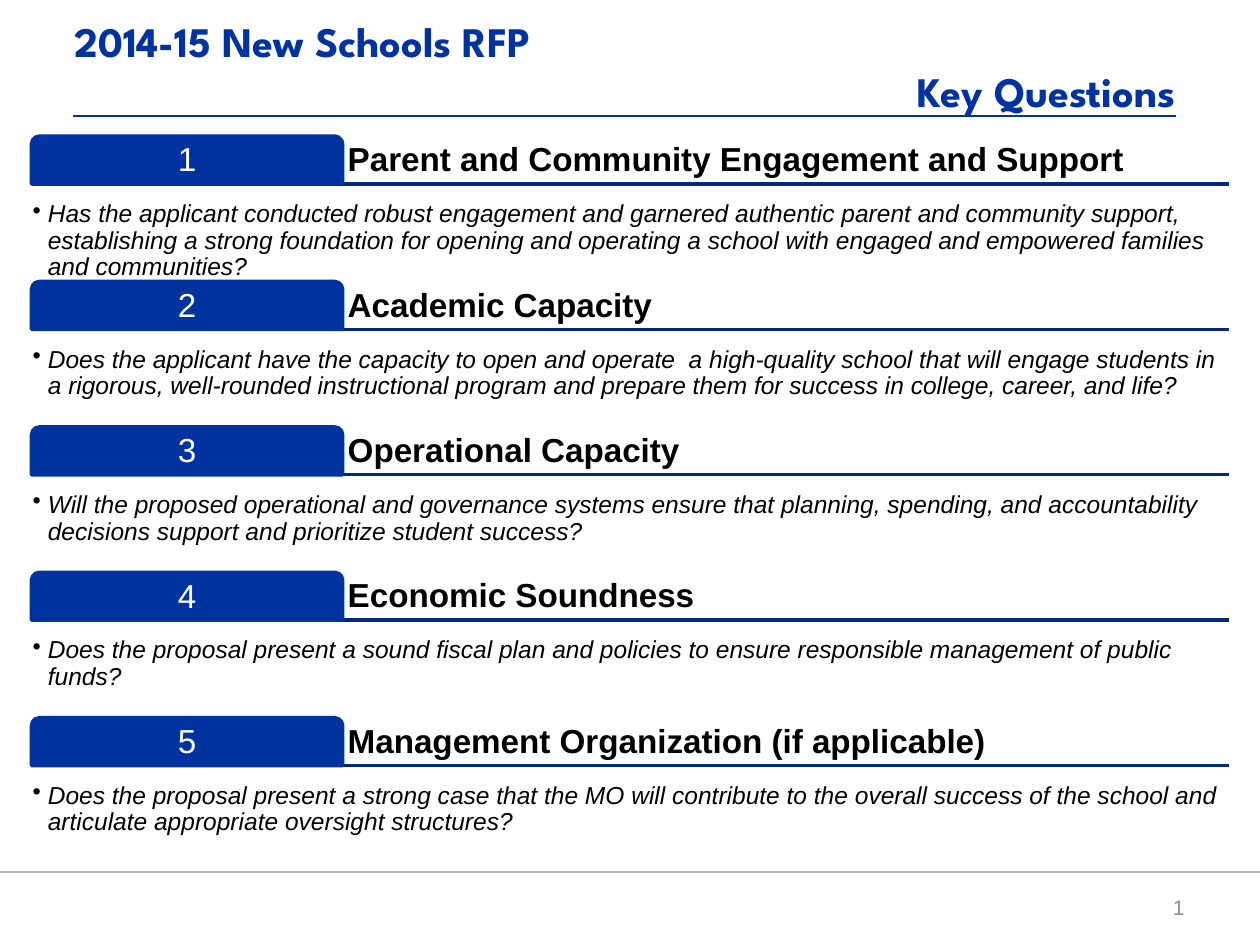
from dataclasses import dataclass

from lxml import etree
from pptx import Presentation
from pptx.dml.color import RGBColor
from pptx.enum.shapes import MSO_CONNECTOR, MSO_SHAPE
from pptx.enum.text import MSO_ANCHOR, PP_ALIGN
from pptx.oxml.ns import qn
from pptx.util import Inches, Pt

LEFT, CENTER, RIGHT = PP_ALIGN.LEFT, PP_ALIGN.CENTER, PP_ALIGN.RIGHT
TOP, MIDDLE, BOTTOM = MSO_ANCHOR.TOP, MSO_ANCHOR.MIDDLE, MSO_ANCHOR.BOTTOM
TAB_SHAPE = MSO_SHAPE.ROUND_2_SAME_RECTANGLE
STRAIGHT = MSO_CONNECTOR.STRAIGHT

COLORS = {
    "blue": "0033A0",
    "rule": "002980",
    "black": "000000",
    "white": "FFFFFF",
    "footer_rule": "B7B7B7",
    "page_number": "8C8C8C",
}

# Section grid, in inches
GRID_LEFT, GRID_WIDTH = 0.25, 9.5
FIRST_TOP, PITCH = 1.08, 1.154
HEADER_HEIGHT, BODY_HEIGHT = 0.38, 0.76
TAB_WIDTH = 2.47


@dataclass
class Style:
    size: float
    color: str
    font: str = "Arial"
    bold: bool = False
    italic: bool = False
    align: PP_ALIGN = LEFT
    spacing: float = 1.0


@dataclass
class Question:
    heading: str
    text: str


TITLE = Style(24, "blue", font="League Spartan", bold=True)
HEADING = Style(19, "black", bold=True, spacing=0.9)
NUMBER = Style(19, "white", align=CENTER, spacing=0.9)
BODY = Style(14, "black", italic=True, spacing=0.9)
PAGE_NUMBER = Style(12, "page_number", align=RIGHT)

QUESTIONS = [
    Question(
        "Parent and Community Engagement and Support",
        "Has the applicant conducted robust engagement and garnered authentic "
        "parent and community support, establishing a strong foundation for "
        "opening and operating a school with engaged and empowered families "
        "and communities?",
    ),
    Question(
        "Academic Capacity",
        "Does the applicant have the capacity to open and operate  a "
        "high-quality school that will engage students in a rigorous, "
        "well-rounded instructional program and prepare them for success in "
        "college, career, and life?",
    ),
    Question(
        "Operational Capacity",
        "Will the proposed operational and governance systems ensure that "
        "planning, spending, and accountability decisions support and "
        "prioritize student success?",
    ),
    Question(
        "Economic Soundness",
        "Does the proposal present a sound fiscal plan and policies to ensure "
        "responsible management of public funds?",
    ),
    Question(
        "Management Organization (if applicable)",
        "Does the proposal present a strong case that the MO will contribute "
        "to the overall success of the school and articulate appropriate "
        "oversight structures?",
    ),
]


def rgb(name: str) -> RGBColor:
    return RGBColor.from_string(COLORS[name])


def style_paragraph(para, style: Style) -> None:
    para.alignment = style.align
    para.line_spacing = style.spacing
    font = para.font
    font.name, font.size = style.font, Pt(style.size)
    font.bold, font.italic = style.bold, style.italic
    font.color.rgb = rgb(style.color)


def indent(para, left: float, first: float = 0) -> None:
    properties = para._p.get_or_add_pPr()
    properties.set("marL", str(Inches(left)))
    properties.set("indent", str(Inches(first)))


def add_bullet(para) -> None:
    indent(para, 0.12, -0.12)
    bullet = etree.SubElement(para._p.get_or_add_pPr(), qn("a:buChar"))
    bullet.set("char", "•")


def add_text(page, left: float, top: float, width: float, height: float,
             text: str, style: Style, anchor: MSO_ANCHOR, inset: float = 0.04,
             top_inset: float | None = None, bullet: bool = False):
    box = page.shapes.add_textbox(
        Inches(left), Inches(top), Inches(width), Inches(height))
    frame = box.text_frame
    frame.word_wrap = True
    frame.vertical_anchor = anchor
    frame.margin_left = frame.margin_right = frame.margin_bottom = Inches(inset)
    frame.margin_top = Inches(inset if top_inset is None else top_inset)
    frame.text = text
    for para in frame.paragraphs:
        if bullet:
            add_bullet(para)
        style_paragraph(para, style)
    return frame


def add_rule(page, left: float, right: float, y: float,
             color: str, weight: float) -> None:
    rule = page.shapes.add_connector(
        STRAIGHT, Inches(left), Inches(y), Inches(right), Inches(y))
    rule.line.color.rgb = rgb(color)
    rule.line.width = Pt(weight)
    etree.SubElement(rule._element.spPr, qn("a:effectLst"))


def add_question(page, number: int, question: Question) -> None:
    top = FIRST_TOP + (number - 1) * PITCH
    base = top + HEADER_HEIGHT
    heading_left = GRID_LEFT + TAB_WIDTH
    add_rule(page, GRID_LEFT, GRID_LEFT + GRID_WIDTH, base, "rule", 2)
    add_text(page, heading_left, top, GRID_WIDTH - TAB_WIDTH, HEADER_HEIGHT,
             question.heading, HEADING, BOTTOM)

    # Numbered tab
    tab = page.shapes.add_shape(
        TAB_SHAPE, Inches(GRID_LEFT), Inches(top),
        Inches(TAB_WIDTH), Inches(HEADER_HEIGHT))
    tab.adjustments[0], tab.adjustments[1] = 0.167, 0
    tab.shadow.inherit = False
    tab.fill.solid()
    tab.fill.fore_color.rgb = rgb("blue")
    tab.line.color.rgb = rgb("blue")
    tab.line.width = Pt(2)
    add_text(page, GRID_LEFT + 0.02, top + 0.02, TAB_WIDTH - 0.04,
             HEADER_HEIGHT - 0.02, str(number), NUMBER, MIDDLE)

    add_text(page, GRID_LEFT, base, GRID_WIDTH, BODY_HEIGHT, question.text,
             BODY, TOP, inset=0.01, top_inset=0.14, bullet=True)


def main() -> None:
    deck = Presentation()
    deck.slide_width, deck.slide_height = Inches(10), Inches(7.5)
    page = deck.slides.add_slide(deck.slide_layouts[6])

    # Footer rule
    add_rule(page, 0, 10, 6.92, "footer_rule", 0.75)

    # Title, split between the left and right edges
    title = add_text(page, 0.25, 0.11, 9.08, 0.81,
                     "2014-15 New Schools RFP\nKey Questions",
                     TITLE, BOTTOM, inset=0)
    indent(title.paragraphs[0], 0.34)
    title.paragraphs[1].alignment = RIGHT

    # Key questions
    for number, question in enumerate(QUESTIONS, start=1):
        add_question(page, number, question)

    # Title rule and page number
    add_rule(page, 0.58, 9.33, 0.92, "blue", 1.5)
    add_text(page, 7.17, 7, 2.33, 0.4, "1", PAGE_NUMBER, MIDDLE, inset=0.1)

    deck.save("out.pptx")


if __name__ == "__main__":
    main()
